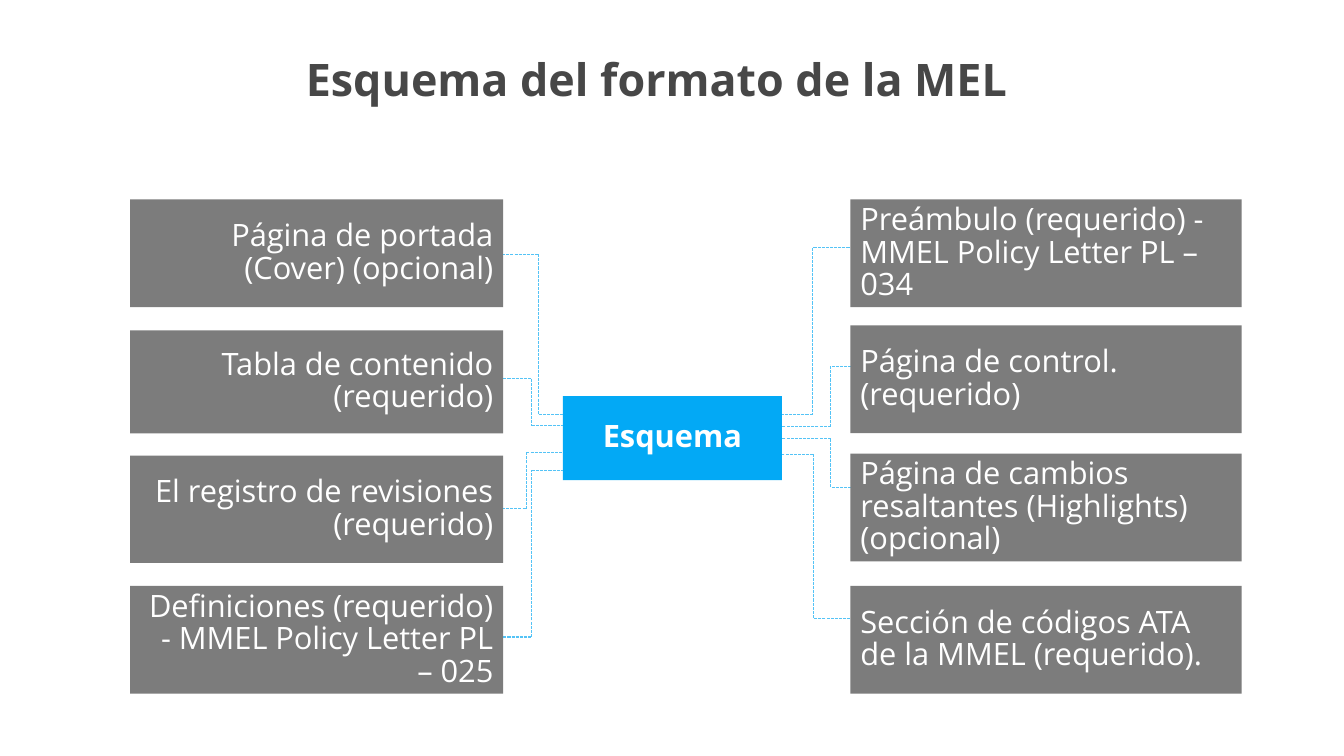
from lxml import etree
from pptx import Presentation
from pptx.dml.color import RGBColor
from pptx.enum import dml, shapes, text
from pptx.oxml import ns
from pptx.util import Pt

COLORS = {"title": "474747", "hub": "03A9F5", "box": "7C7C7C",
          "line": "54C3F6", "text": "FFFFFF"}
FONT = "Open Sans"
ALIGN = text.PP_ALIGN

HUB_LEFT, HUB_TOP, HUB_WIDTH, HUB_HEIGHT = 402, 283, 156.5, 60
BRANCH_REACH = 73.5  # from the bend to the end tucked under the box

# Each topic: label, box top, box height, branch bend x, branch y at box, at hub
LEFT_TOPICS = [
    ("Página de portada (Cover) (opcional)", 142.5, 77, 385, 181.5, 296),
    ("Tabla de contenido (requerido)", 236, 73.5, 380, 270.5, 304),
    ("El registro de revisiones (requerido)", 325.5, 76.5, 376, 363.5, 323),
    ("Definiciones (requerido) - MMEL Policy Letter PL – 025",
     418.5, 77, 380, 455, 336),
]
RIGHT_TOPICS = [
    ("Preámbulo (requerido) - MMEL Policy Letter PL – 034",
     142.5, 77, 580.5, 177, 296),
    ("Página de control. (requerido)", 232.5, 77, 593.5, 261.5, 304.5),
    ("Página de cambios resaltantes (Highlights) (opcional)",
     324, 77, 593.5, 348, 313),
    ("Sección de códigos ATA de la MMEL (requerido).",
     418.5, 77, 581, 441.5, 324.5),
]


def color(name):
    return RGBColor.from_string(COLORS[name])


def write(shape, content, size, color_name, align, bold=False):
    frame = shape.text_frame
    frame.word_wrap = True
    frame.auto_size = text.MSO_AUTO_SIZE.NONE
    frame.vertical_anchor = text.MSO_ANCHOR.MIDDLE
    paragraph = frame.paragraphs[0]
    paragraph.alignment = align
    paragraph.line_spacing = 0.88
    paragraph.space_before = Pt(0)
    run = paragraph.add_run()
    run.text = content
    run.font.name = FONT
    run.font.size = Pt(size)
    run.font.bold = bold
    run.font.color.rgb = color(color_name)


def add_title(slide, content):
    title = slide.shapes.title
    title.left, title.top = Pt(152.5), Pt(6)
    title.width, title.height = Pt(633.5), Pt(105)
    write(title, content, 32, "title", ALIGN.CENTER, bold=True)


def add_box(slide, content, left, top, width, height, fill, align, bold=False):
    box = slide.shapes.add_shape(shapes.MSO_SHAPE.RECTANGLE, Pt(left), Pt(top),
                                 Pt(width), Pt(height))
    box.shadow.inherit = False
    box.fill.solid()
    box.fill.fore_color.rgb = color(fill)
    box.line.fill.background()
    write(box, content, 22, "text", align, bold)


def add_line(slide, start, end):
    line = slide.shapes.add_connector(shapes.MSO_CONNECTOR.STRAIGHT,
                                      *map(Pt, start + end))
    line.line.color.rgb = color("line")
    line.line.width = Pt(0.75)
    line.line.dash_style = dml.MSO_LINE.SQUARE_DOT
    etree.SubElement(line._element.spPr, ns.qn("a:effectLst"))


def add_branch(slide, box_x, bend_x, hub_x, box_y, hub_y):
    """Join a topic box to the hub with a stepped dashed line."""
    corners = [(box_x, box_y), (bend_x, box_y), (bend_x, hub_y), (hub_x, hub_y)]
    for start, end in zip(corners, corners[1:]):
        add_line(slide, start, end)


def add_side(slide, topics, left, width, hub_x, outward, align):
    """Draw one column of topics; outward is -1 to the left, 1 to the right."""
    for _, _, _, bend_x, box_y, hub_y in topics:
        add_branch(slide, bend_x + outward * BRANCH_REACH, bend_x, hub_x,
                   box_y, hub_y)
    for label, top, height, *_ in topics:
        add_box(slide, label, left, top, width, height, "box", align)


def main():
    presentation = Presentation()
    presentation.slide_width, presentation.slide_height = Pt(960), Pt(540)
    slide = presentation.slides.add_slide(presentation.slide_layouts[0])
    subtitle = slide.placeholders[1]._element
    subtitle.getparent().remove(subtitle)

    add_title(slide, "Esquema del formato de la MEL")
    add_box(slide, "Esquema", HUB_LEFT, HUB_TOP, HUB_WIDTH, HUB_HEIGHT, "hub",
            ALIGN.CENTER, bold=True)
    add_side(slide, LEFT_TOPICS, 93, 266.5, HUB_LEFT, -1, ALIGN.RIGHT)
    add_side(slide, RIGHT_TOPICS, 607.5, 279.5, HUB_LEFT + HUB_WIDTH, 1,
             ALIGN.LEFT)
    presentation.save("out.pptx")


if __name__ == "__main__":
    main()
